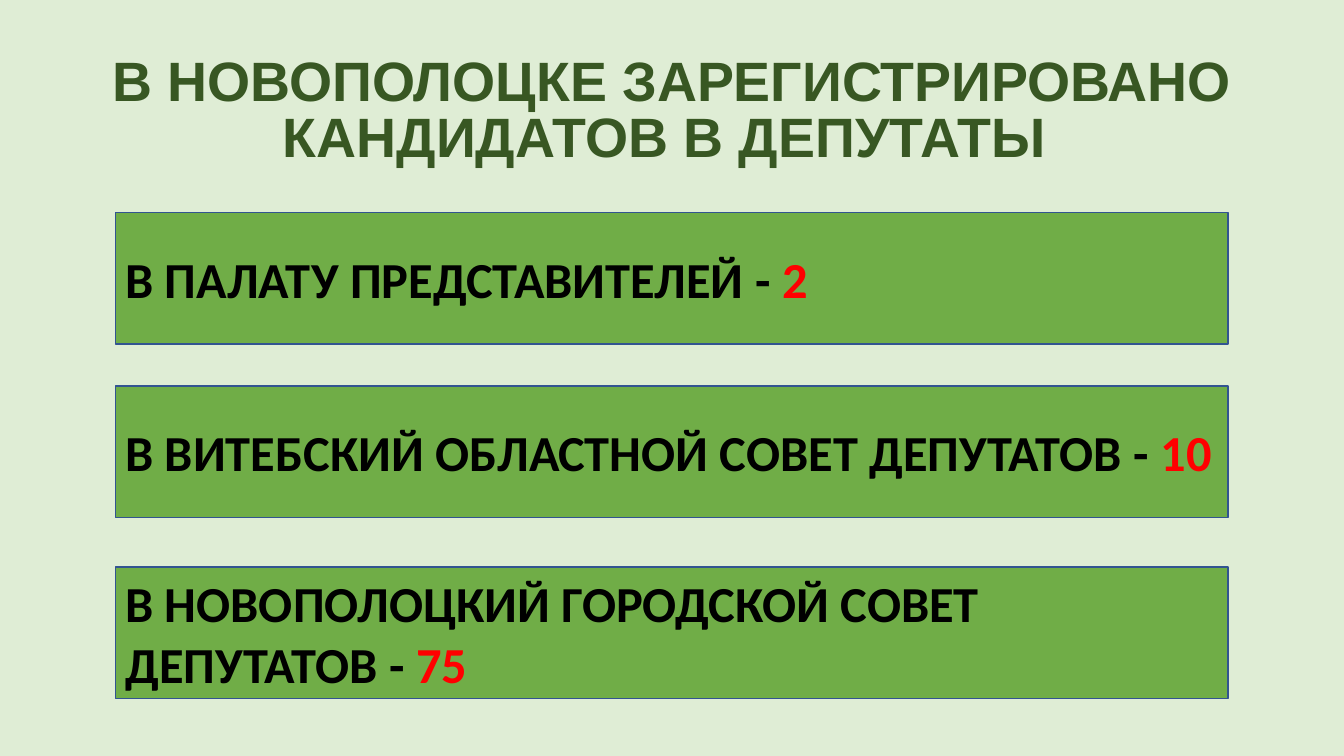
from pptx import Presentation
from pptx.dml.color import RGBColor
from pptx.enum.shapes import MSO_SHAPE
from pptx.enum.text import MSO_ANCHOR, PP_ALIGN
from pptx.util import Cm, Pt

RECTANGLE = MSO_SHAPE.RECTANGLE
MIDDLE = MSO_ANCHOR.MIDDLE
LEFT, CENTER = PP_ALIGN.LEFT, PP_ALIGN.CENTER

COLORS = {
    "background": "DFEDD5",
    "title": "385723",
    "bar": "70AD47",
    "border": "325491",
    "council": "000000",
    "count": "FF0000",
}


def color(name):
    return RGBColor.from_string(COLORS[name])


presentation = Presentation()
presentation.slide_width = Cm(33.87)
presentation.slide_height = Cm(19.05)
slide = presentation.slides.add_slide(presentation.slide_layouts[6])
slide.background.fill.solid()
slide.background.fill.fore_color.rgb = color("background")

title = slide.shapes.add_textbox(Cm(2.33), Cm(1.01), Cm(29.21), Cm(3.68))
title.text_frame.word_wrap = True
title.text_frame.vertical_anchor = MIDDLE
heading = title.text_frame.paragraphs[0]
heading.text = "В НОВОПОЛОЦКЕ ЗАРЕГИСТРИРОВАНО КАНДИДАТОВ В ДЕПУТАТЫ "
heading.alignment = CENTER
heading.line_spacing = Pt(40)
heading.font.name = "Arial"
heading.font.size = Pt(39.6)
heading.font.bold = True
heading.font.color.rgb = color("title")

candidates = [
    (5.36, "В ПАЛАТУ ПРЕДСТАВИТЕЛЕЙ", 2),
    (9.73, "В ВИТЕБСКИЙ ОБЛАСТНОЙ СОВЕТ ДЕПУТАТОВ", 10),
    (14.29, "В НОВОПОЛОЦКИЙ ГОРОДСКОЙ СОВЕТ ДЕПУТАТОВ", 75),
]
for top, council, count in candidates:
    bar = slide.shapes.add_shape(RECTANGLE, Cm(2.91), Cm(top), Cm(28.04), Cm(3.31))
    bar.shadow.inherit = False
    bar.fill.solid()
    bar.fill.fore_color.rgb = color("bar")
    bar.line.color.rgb = color("border")
    bar.line.width = Pt(1)
    bar.text_frame.word_wrap = True
    bar.text_frame.vertical_anchor = MIDDLE
    entry = bar.text_frame.paragraphs[0]
    entry.alignment = LEFT
    entry.font.name = "Calibri"
    entry.font.size = Pt(36)
    entry.font.bold = True
    for words, role in ((f"{council} - ", "council"), (str(count), "count")):
        run = entry.add_run()
        run.text = words
        run.font.color.rgb = color(role)

presentation.save("out.pptx")
